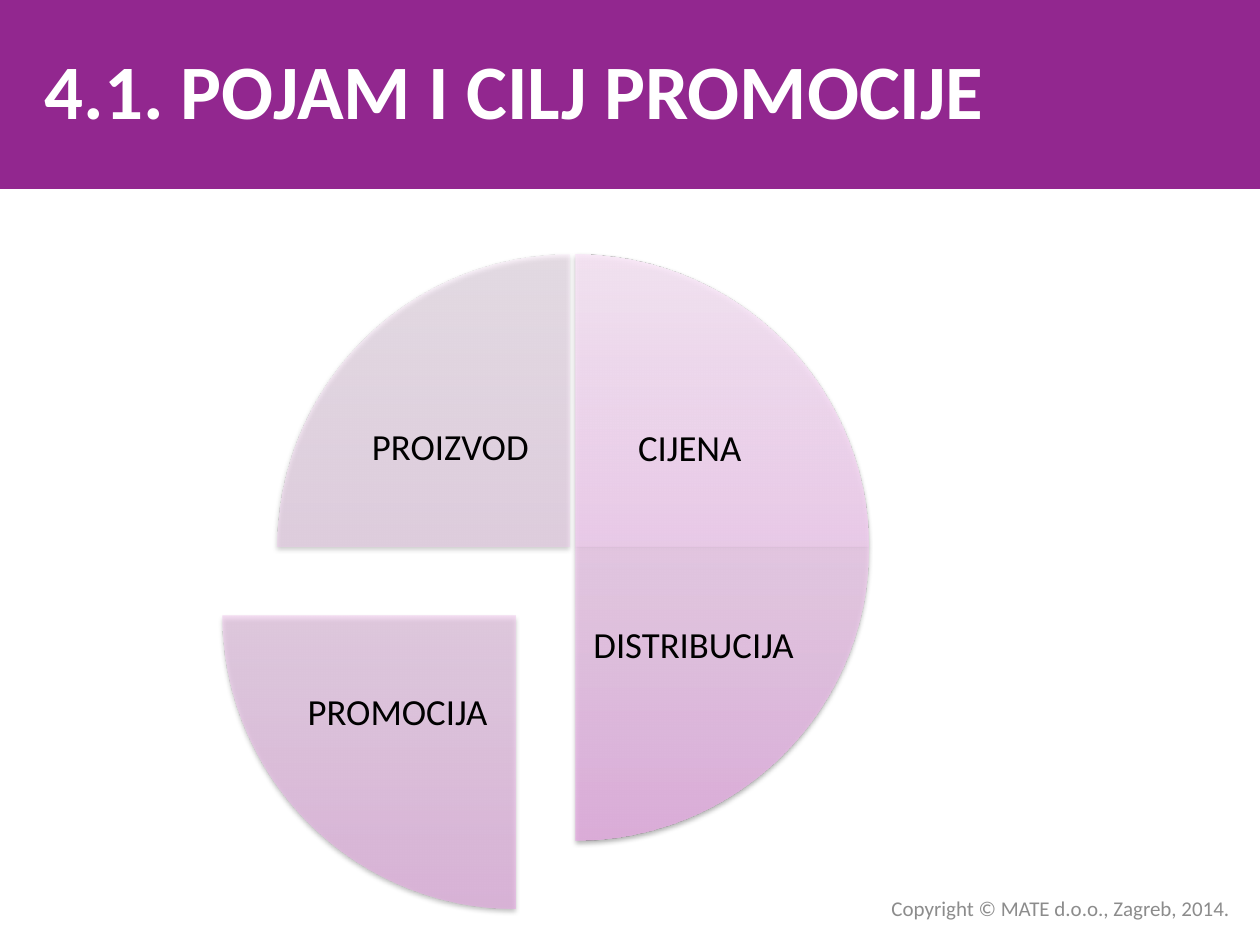
from pptx import Presentation
from pptx.dml.color import RGBColor
from pptx.enum.shapes import MSO_SHAPE as Shape
from pptx.enum.text import MSO_ANCHOR as Anchor, PP_ALIGN as Align
from pptx.oxml import parse_xml
from pptx.oxml.ns import nsdecls
from pptx.util import Pt

# Content
TITLE = "4.1. POJAM I CILJ PROMOCIJE"
COPYRIGHT = "Copyright © MATE d.o.o., Zagreb, 2014."
# label, circle left/top, label left/top, start angle, opacity %
WEDGES = [
    ("CIJENA", (162, 145.5), (332.6, 207.4), 270, 90),
    ("DISTRIBUCIJA", (162, 146.2), (334.8, 319.7), 0, 77),
    ("PROMOCIJA", (127.4, 185), (165.6, 357.8), 90, 63),
    ("PROIZVOD", (158.4, 145.5), (195.8, 206.6), 180, 50),
]

# Theme and sizes
THEME = {
    "font": "Calibri",
    "band": "92278F",
    "gradient": [(0, "E6AAE3"), (35, "ECC4EA"), (100, "F9E8F8")],
    "title": {"size": 44, "color": "FFFFFF", "bold": True},
    "footer": {"size": 12, "color": "8C8C8C", "bold": False},
    "label": {"size": 21, "color": "000000", "bold": False},
}
WIDTH, HEIGHT, BAND_HEIGHT = 720, 540, 108
DIAMETER = 334
LABEL_SIZE = (123.1, 99.4)
EMU = 12700


def add_text(s, text, box, style, align, inset=None):
    tf = s.shapes.add_textbox(*map(Pt, box)).text_frame
    tf.word_wrap = True
    tf.vertical_anchor = Anchor.MIDDLE
    if inset is not None:
        for side in ("left", "right", "top", "bottom"):
            setattr(tf, f"margin_{side}", Pt(inset))
    p = tf.paragraphs[0]
    p.alignment = align
    r = p.add_run()
    r.text = text
    look = THEME[style]
    values = {"name": THEME["font"], "size": Pt(look["size"]), "bold": look["bold"]}
    for name, value in values.items():
        setattr(r.font, name, value)
    r.font.color.rgb = RGBColor.from_string(look["color"])
    return p


def add_plain_shape(s, kind, box):
    sp = s.shapes.add_shape(kind, *map(Pt, box))
    sp.line.fill.background()
    sp.shadow.inherit = False
    return sp


def add_wedge(s, corner, start, opacity):
    sp = add_plain_shape(s, Shape.PIE, (*corner, DIAMETER, DIAMETER))
    for i, angle in enumerate((start, (start + 90) % 360)):
        sp.adjustments[i] = angle * 0.6
    # Upward gradient with transparency
    stops = "".join(
        f'<a:gs pos="{pos * 1000}"><a:srgbClr val="{color}">'
        f'<a:alpha val="{opacity * 1000}"/></a:srgbClr></a:gs>'
        for pos, color in THEME["gradient"])
    sp_pr = sp._element.spPr
    sp_pr.insert(2, parse_xml(
        f'<a:gradFill {nsdecls("a")} rotWithShape="1"><a:gsLst>{stops}</a:gsLst>'
        '<a:lin ang="16200000" scaled="0"/></a:gradFill>'))
    # Soft shadow below
    sp_pr[-1].append(parse_xml(
        f'<a:outerShdw {nsdecls("a")} blurRad="{int(3.1 * EMU)}" '
        f'dist="{int(1.6 * EMU)}" dir="5400000" rotWithShape="0">'
        '<a:srgbClr val="000000"><a:alpha val="38000"/></a:srgbClr></a:outerShdw>'))


def main():
    prs = Presentation()
    prs.slide_width, prs.slide_height = Pt(WIDTH), Pt(HEIGHT)
    s = prs.slides.add_slide(prs.slide_layouts[6])

    # Title band and footer
    band = add_plain_shape(s, Shape.RECTANGLE, (0, 0, WIDTH, BAND_HEIGHT))
    band.fill.solid()
    band.fill.fore_color.rgb = RGBColor.from_string(THEME["band"])
    add_text(s, TITLE, (0, 5.8, 588.2, 90), "title", Align.CENTER)
    add_text(s, COPYRIGHT, (337.7, 508.3, 372.2, 21.6), "footer", Align.RIGHT)

    # Marketing mix wheel
    for label, corner, label_corner, start, opacity in WEDGES:
        add_wedge(s, corner, start, opacity)
        p = add_text(s, label, (*label_corner, *LABEL_SIZE), "label", Align.CENTER, 2)
        p.line_spacing = 0.9

    prs.save("out.pptx")


if __name__ == "__main__":
    main()
